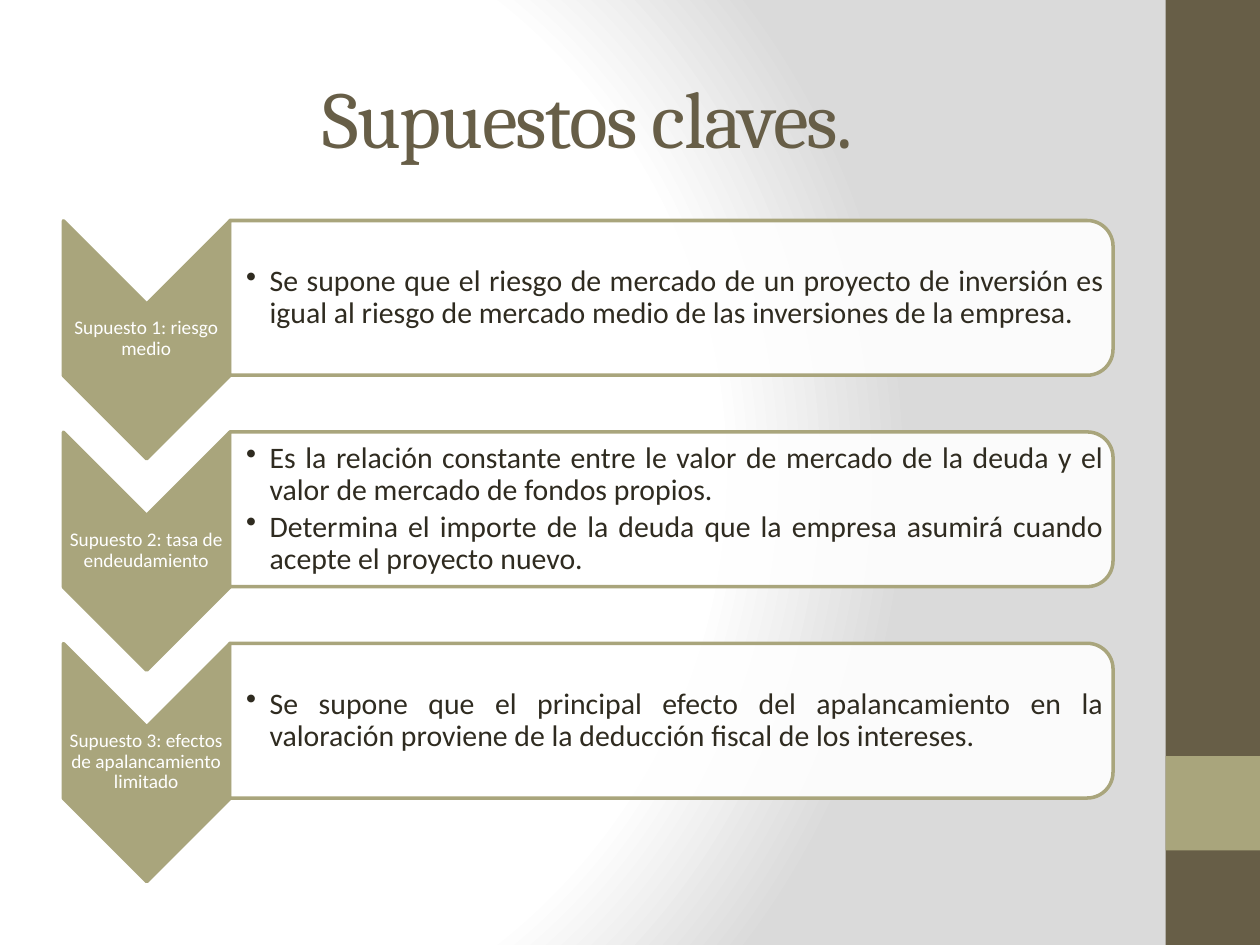
from dataclasses import dataclass
from pptx import Presentation
from pptx.dml.color import RGBColor
from pptx.enum.shapes import MSO_SHAPE
from pptx.enum.text import MSO_ANCHOR, MSO_AUTO_SIZE, PP_ALIGN
from pptx.oxml import parse_xml
from pptx.oxml.ns import qn
from pptx.util import Pt
from lxml.etree import SubElement


@dataclass(frozen=True)
class Theme:
    dark: str = "675E47"
    sage: str = "A9A57C"
    ink: str = "2F2B20"
    white: str = "FFFFFF"
    gray: str = "DADADA"
    head: str = "Cambria"
    body: str = "Calibri"
    big: int = 46
    mid: int = 17
    small: int = 11


STEPS = [
    ("Supuesto 1: riesgo medio", [
        "Se supone que el riesgo de mercado de un proyecto de inversión es igual al "
        "riesgo de mercado medio de las inversiones de la empresa."]),
    ("Supuesto 2: tasa de endeudamiento", [
        "Es la relación constante entre le valor de mercado de la deuda y el valor "
        "de mercado de fondos propios.",
        "Determina el importe de la deuda que la empresa asumirá cuando acepte el "
        "proyecto nuevo."]),
    ("Supuesto 3: efectos de apalancamiento limitado", [
        "Se supone que el principal efecto del apalancamiento en la valoración "
        "proviene de la deducción fiscal de los intereses."]),
]


def assign(item, values):
    for name, value in values.items():
        setattr(item, name, value)


class Deck:
    def __init__(self, theme):
        self.theme = theme
        self.file = Presentation()
        assign(self.file, {"slide_width": Pt(720), "slide_height": Pt(540)})
        self.slide = self.file.slides.add_slide(self.file.slide_layouts[5])

    def ground(self):
        self.slide.background.fill.solid()
        old = self.slide.element.find(".//" + qn("a:solidFill"))
        stops = [(0, self.theme.white), (75, self.theme.white), (100, self.theme.gray)]
        marks = "".join(f'<a:gs pos="{pos * 1000}"><a:srgbClr val="{color}"/></a:gs>'
                        for pos, color in stops)
        old.getparent().replace(old, parse_xml(
            '<a:gradFill xmlns:a="http://schemas.openxmlformats.org/drawingml/2006/main" '
            f'rotWithShape="1"><a:gsLst>{marks}</a:gsLst><a:path path="circle">'
            '<a:fillToRect l="20000" t="50000" r="100000" b="50000"/></a:path></a:gradFill>'))

    def shape(self, kind, box, color, edge=None, turn=0, alpha=None):
        item = self.slide.shapes.add_shape(kind, *map(Pt, box))
        item.shadow.inherit = False
        item.rotation = turn
        item.fill.solid()
        item.fill.fore_color.rgb = RGBColor.from_string(color)
        if alpha:
            tint = item.element.spPr.find(qn("a:solidFill"))[0]
            SubElement(tint, qn("a:alpha"), val=str(alpha * 1000))
        if edge:
            item.line.color.rgb = RGBColor.from_string(edge)
            item.line.width = Pt(2)
        else:
            item.line.fill.background()

    def words(self, para, text, font, size, color, form):
        assign(para, form)
        run = para.add_run()
        run.text = text
        assign(run.font, {"name": font, "size": Pt(size)})
        run.font.color.rgb = RGBColor.from_string(color)
        return run

    def title(self, text, box):
        item = self.slide.shapes.title
        assign(item, dict(zip(("left", "top", "width", "height"), map(Pt, box))))
        assign(item.text_frame, {"vertical_anchor": MSO_ANCHOR.MIDDLE, "word_wrap": True,
                                 "auto_size": MSO_AUTO_SIZE.NONE})
        run = self.words(item.text_frame.paragraphs[0], text, self.theme.head,
                         self.theme.big, self.theme.dark, {"alignment": PP_ALIGN.CENTER})
        run._r.get_or_add_rPr().set("spc", "-100")

    def text(self, lines, box, size, color, form, inset=1, bullet=False):
        frame = self.slide.shapes.add_textbox(*map(Pt, box)).text_frame
        assign(frame, {"word_wrap": True, "vertical_anchor": MSO_ANCHOR.MIDDLE,
                       "margin_left": Pt(inset), "margin_right": Pt(1),
                       "margin_top": Pt(1), "margin_bottom": Pt(1)})
        for rank, line in enumerate(lines):
            para = frame.add_paragraph() if rank else frame.paragraphs[0]
            self.words(para, line, self.theme.body, size, color, form)
            if bullet:
                props = para._p.get_or_add_pPr()
                props.set("marL", str(Pt(13.5)))
                props.set("indent", str(Pt(-13.5)))
                SubElement(props, qn("a:buChar"), char="•")

    def step(self, top, label, lines):
        look = self.theme
        self.shape(MSO_SHAPE.CHEVRON, (15.8, top + 20.6, 136, 95.2),
                   look.sage, look.sage, 90)
        self.text([label], (36, top + 47.3, 95.2, 41), look.small, look.white,
                  {"alignment": PP_ALIGN.CENTER, "line_spacing": 0.9,
                   "space_after": Pt(3.85)})
        self.shape(MSO_SHAPE.ROUND_2_SAME_RECTANGLE, (339.4, top - 208.2, 88.4, 504.8),
                   look.white, look.sage, 90, 90)
        self.text(lines, (131.2, top + 4.3, 500.5, 79.8), look.mid, look.ink,
                  {"alignment": PP_ALIGN.JUSTIFY, "line_spacing": 0.9,
                   "space_after": Pt(2.55)}, 9.4, True)


def main():
    look = Theme()
    deck = Deck(look)
    deck.ground()
    deck.shape(MSO_SHAPE.RECTANGLE, (666, 0, 54, 540), look.dark)
    deck.shape(MSO_SHAPE.RECTANGLE, (666, 432, 54, 54), look.sage)
    deck.title("Supuestos claves.", (36, 21.6, 600, 90))
    for rank, (label, lines) in enumerate(STEPS):
        deck.step(126 + rank * 120.8, label, lines)
    deck.file.save("out.pptx")


if __name__ == "__main__":
    main()
